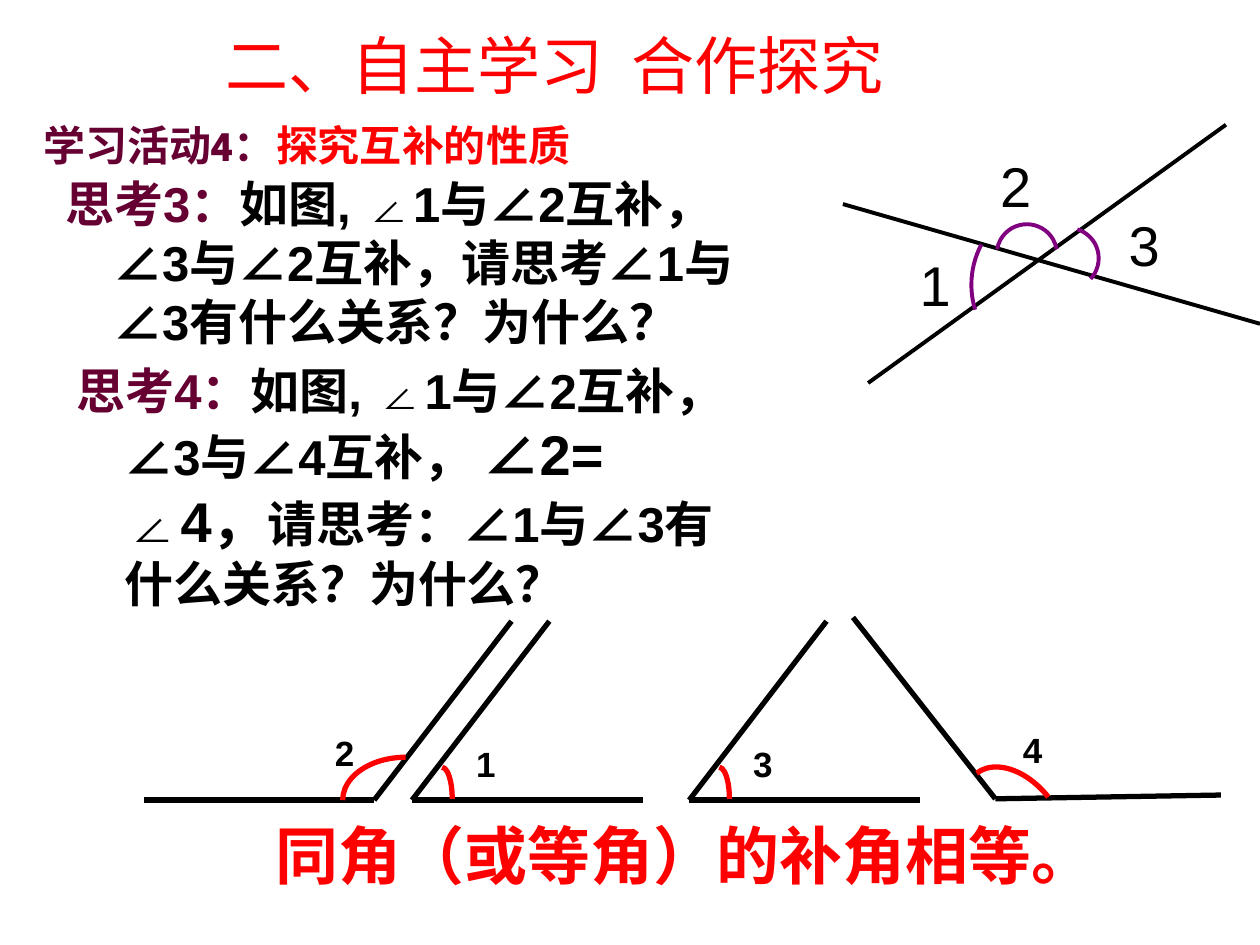
import pptx
import pptx.util
import pptx.dml.color
import pptx.enum.shapes
import pptx.enum.text
import pptx.oxml.ns
import lxml.etree

Inches = pptx.util.Inches
Pt = pptx.util.Pt
RGBColor = pptx.dml.color.RGBColor
ANCHOR = pptx.enum.text.MSO_ANCHOR

BLACK = RGBColor(0x00, 0x00, 0x00)
RED = RGBColor(0xFF, 0x00, 0x00)
WINE = RGBColor(0x66, 0x00, 0x33)
PURPLE = RGBColor(0x80, 0x00, 0x80)


def style(size, color, bold=False, name="Arial"):
    return {"size": Pt(size), "bold": bold, "name": name, "color": color}


def add_text(shapes, box, runs, hanging=0, wrap=True, anchor=ANCHOR.TOP):
    """Add one paragraph made of (text, style) runs."""
    tf = shapes.add_textbox(*map(Inches, box)).text_frame
    tf.word_wrap = wrap
    tf.vertical_anchor = anchor
    p = tf.paragraphs[0]
    if hanging:
        pPr = p._p.get_or_add_pPr()
        pPr.set("marL", str(Inches(hanging)))
        pPr.set("indent", str(-Inches(hanging)))
    for text, fmt in runs:
        r = p.add_run()
        r.text = text
        for key, value in fmt.items():
            if key == "color":
                r.font.color.rgb = value
            else:
                setattr(r.font, key, value)


def add_line(shapes, start, end, width):
    line = shapes.add_connector(pptx.enum.shapes.MSO_CONNECTOR.STRAIGHT,
                                *map(Inches, start + end))
    line.line.color.rgb = BLACK
    line.line.width = Pt(width)
    lxml.etree.SubElement(line._element.spPr, pptx.oxml.ns.qn("a:effectLst"))


def add_arc(shapes, center, radii, angles, color, width, rotation=0):
    """Draw an arc clockwise between two angles in degrees, 0 pointing right."""
    (x, y), (rx, ry) = center, radii
    sp = shapes.add_shape(pptx.enum.shapes.MSO_SHAPE.ARC,
                          *map(Inches, (x - rx, y - ry, 2 * rx, 2 * ry)))
    for i, angle in enumerate(angles):
        sp.adjustments[i] = angle * 0.6  # 60000 units a degree, scaled by 100000
    sp.rotation = rotation
    sp.shadow.inherit = False
    sp.fill.background()
    sp.line.color.rgb = color
    sp.line.width = Pt(width)


def add_angle(slide, vertex, rays, arc, label, label_at):
    """Group an angle's rays, arc and number, all offset from its vertex."""
    def at(offset):
        return vertex[0] + offset[0], vertex[1] + offset[1]

    shapes = slide.shapes.add_group_shape().shapes
    for ray in rays:
        add_line(shapes, vertex, at(ray), 3)
    center, radii, angles, rotation = arc
    add_arc(shapes, at(center), radii, angles, RED, 3, rotation)
    add_text(shapes, at(label_at) + (0.36, 0.43),
             [(label, style(20, BLACK, True))], wrap=False)


def add_equal_angles(slide, left, base):
    slant = (1.09, -1.42)
    obtuse = ((0.25, 0), (0.5, 0.34), (180, 270), 0)
    acute = ((0.24, -0.01), (0.08, 0.25), (270, 0), 0)
    tilted = ((0.16, 0.19), (0.5, 0.33), (180, 270), 51.8)
    add_angle(slide, (left + 1.83, base), [(-1.83, 0), slant],
              obtuse, "2", (-0.41, -0.59))
    for x, label in ((2.13, "1"), (4.33, "3")):
        add_angle(slide, (left + x, base), [(1.83, 0), slant],
                  acute, label, (0.41, -0.51))
    add_angle(slide, (left + 6.76, base - 0.01), [(-1.13, -1.44), (1.79, -0.03)],
              tilted, "4", (0.12, -0.61))


def add_crossing_lines(slide, left, top):
    shapes = slide.shapes
    for start, end in (((0.2, 2.05), (3.04, 0)), ((0, 0.63), (3.31, 1.58))):
        add_line(shapes, (left + start[0], top + start[1]),
                 (left + end[0], top + end[1]), 2.25)
    for x, y, radius, angles in ((1.7, 1.27, 0.68, (163, 208)),
                                 (1.46, 1.03, 0.24, (190, 350)),
                                 (1.79, 1.06, 0.24, (287, 43))):
        add_arc(shapes, (left + x, top + y), (radius, radius), angles, PURPLE, 2.25)
    for label, x, y in (("1", 0.51, 0.95), ("2", 1.15, 0.16), ("3", 2.17, 0.63)):
        add_text(shapes, (left + x, top + y, 0.47, 0.63),
                 [(label, style(32, BLACK))], hanging=0.38)


def add_headings(slide):
    add_text(slide.shapes, (1.69, 0, 5.83, 1.02),
             [("二、自主学习  合作探究", style(36, RED, name="League Spartan"))],
             anchor=ANCHOR.MIDDLE)
    add_text(slide.shapes, (0.25, 0.81, 5.75, 0.67),
             [("学习活动4：", style(24, WINE, True, "League Spartan")),
              ("探究互补的性质", style(24, RED, True))],
             anchor=ANCHOR.MIDDLE)


def add_questions(slide):
    lead, body = style(28, WINE, True), style(28, BLACK, True)
    add_text(slide.shapes, (0.42, 1.33, 5.76, 1.5),
             [("思考3：", lead),
              ("如图, ∠1与∠2互补， ∠3与∠2互补，请思考∠1与∠3有什么关系？为什么？", body)],
             hanging=0.38)
    add_text(slide.shapes, (0.51, 2.81, 5.43, 2.1),
             [("思考4：", lead),
              ("如图, ∠1与∠2互补， ∠3与∠4互补， ", body),
              ("∠2= ∠4，", style(32, BLACK, True)),
              ("请思考：∠1与∠3有什么关系？为什么？", body)],
             hanging=0.38)


def add_conclusion(slide):
    add_text(slide.shapes, (2.09, 6.43, 7.16, 0.7),
             [("同角（或等角）的补角相等。", style(36, RED, True))])


def main():
    prs = pptx.Presentation()
    prs.slide_width, prs.slide_height = Inches(10), Inches(7.5)
    slide = prs.slides.add_slide(prs.slide_layouts[6])
    add_equal_angles(slide, 1.14, 6.35)
    add_conclusion(slide)
    add_crossing_lines(slide, 6.69, 0.99)
    add_questions(slide)
    add_headings(slide)
    prs.save("out.pptx")


if __name__ == "__main__":
    main()
